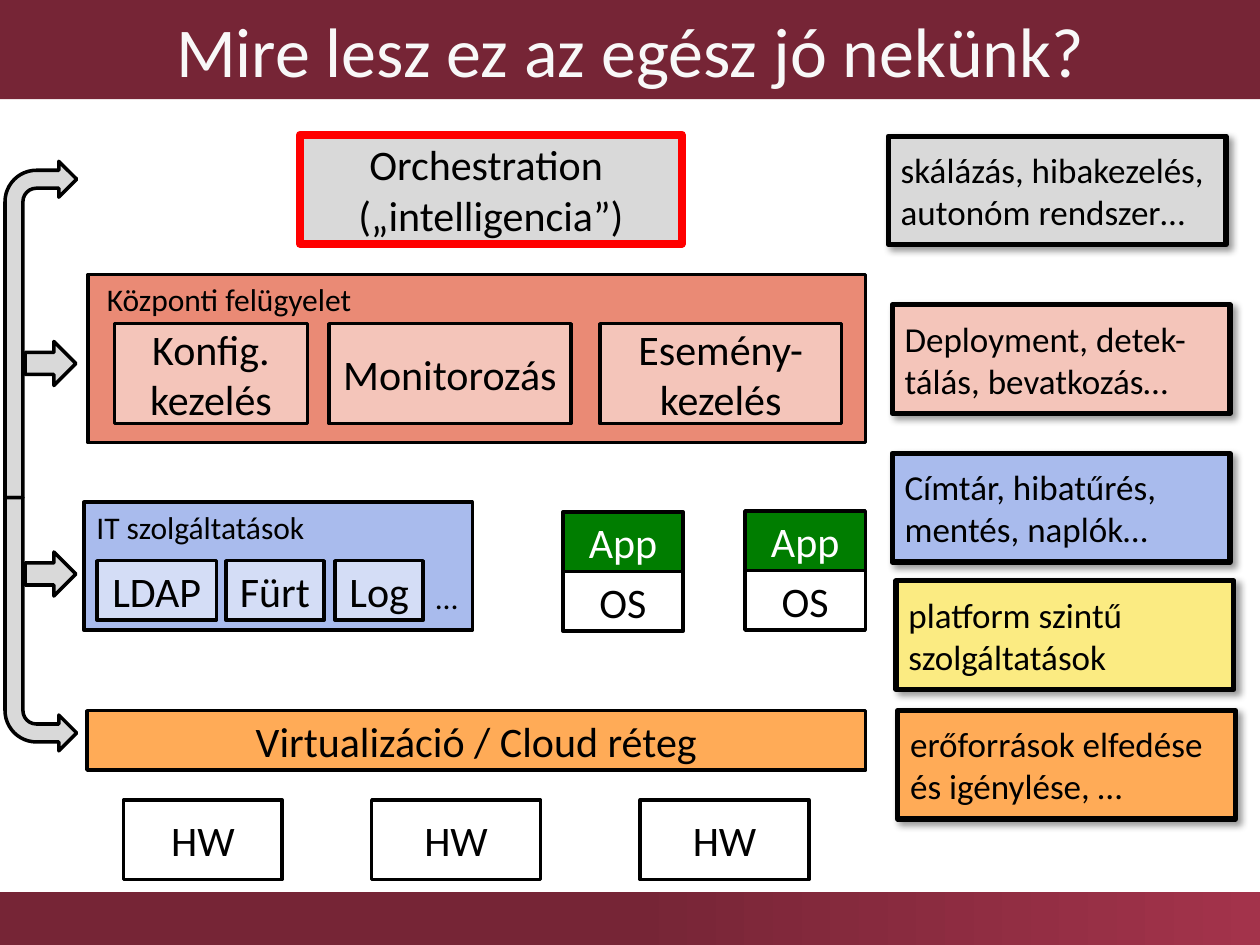
import pptx
import pptx.util
import pptx.dml.color
import pptx.enum.shapes
import pptx.enum.text
import pptx.oxml
import pptx.oxml.ns
from dataclasses import dataclass
from typing import Optional

Pt = pptx.util.Pt
Kind = pptx.enum.shapes.MSO_SHAPE
Align = pptx.enum.text.PP_ALIGN
Anchor = pptx.enum.text.MSO_ANCHOR

BLACK, WHITE, GREY = "000000", "FFFFFF", "D9D9D9"
WINE, ROSE = "762536", "A3334B"
CORAL, PINK = "EA8A75", "F4C5BA"
BLUE, PALE = "A9BBED", "D4DDF6"
ORANGE, YELLOW, GREEN, RED = "FFAB57", "FBEB82", "007D00", "FF0000"

SHADOW = (
    f'<a:effectLst {pptx.oxml.ns.nsdecls("a")}>'
    '<a:outerShdw blurRad="50800" dist="38100" dir="2700000" algn="tl" rotWithShape="0">'
    '<a:srgbClr val="000000"><a:alpha val="40000"/></a:srgbClr>'
    '</a:outerShdw></a:effectLst>'
)


@dataclass
class Box:
    x: float
    y: float
    w: float
    h: float
    fill: Optional[str] = WHITE
    text: str = ""
    ink: str = BLACK
    edge: str = BLACK
    line: float = 2


@dataclass
class Note:
    x: float
    y: float
    fill: str
    text: str


@dataclass
class Label:
    x: float
    y: float
    w: float
    text: str


@dataclass
class Arrow:
    kind: Kind
    x: float
    y: float
    w: float
    h: float
    flip: bool = False


def rgb(code: str) -> pptx.dml.color.RGBColor:
    return pptx.dml.color.RGBColor.from_string(code)


def write(shape, text: str, size: float, ink: str, align=Align.CENTER,
          anchor=Anchor.MIDDLE, side: float = 7.2) -> None:
    frame = shape.text_frame
    frame.auto_size = pptx.enum.text.MSO_AUTO_SIZE.NONE
    frame.word_wrap = True
    frame.vertical_anchor = anchor
    frame.margin_left = frame.margin_right = Pt(side)
    para = frame.paragraphs[0]
    para.alignment = align
    for i, part in enumerate(text.split("\n")):
        if i:
            para.add_line_break()
        run = para.add_run()
        run.text = part
        run.font.name = "Calibri"
        run.font.size = Pt(size)
        run.font.color.rgb = rgb(ink)


def add_form(slide, kind: Kind, x: float, y: float, w: float, h: float,
             fill: Optional[str], edge: str, line: float):
    form = slide.shapes.add_shape(kind, Pt(x), Pt(y), Pt(w), Pt(h))
    form.shadow.inherit = False
    if fill:
        form.fill.solid()
        form.fill.fore_color.rgb = rgb(fill)
    else:
        form.fill.background()
    form.line.color.rgb = rgb(edge)
    form.line.width = Pt(line)
    return form


def add_box(slide, box: Box) -> None:
    form = add_form(slide, Kind.RECTANGLE, box.x, box.y, box.w, box.h,
                    box.fill, box.edge, box.line)
    if box.text:
        write(form, box.text, 24, box.ink, side=5)


def add_note(slide, note: Note) -> None:
    form = add_form(slide, Kind.RECTANGLE, note.x, note.y, 193, 62,
                    note.fill, BLACK, 3)
    props = form._element.spPr
    props.remove(props.find(pptx.oxml.ns.qn("a:effectLst")))
    props.append(pptx.oxml.parse_xml(SHADOW))
    write(form, note.text, 20, BLACK, Align.LEFT)


def add_label(slide, label: Label) -> None:
    area = slide.shapes.add_textbox(Pt(label.x), Pt(label.y), Pt(label.w), Pt(29))
    write(area, label.text, 18, BLACK, Align.LEFT, Anchor.TOP)


def add_arrow(slide, arrow: Arrow) -> None:
    form = add_form(slide, arrow.kind, arrow.x, arrow.y, arrow.w, arrow.h,
                    GREY, BLACK, 2)
    if arrow.flip:
        form._element.spPr.xfrm.set("flipV", "1")


def add_band(slide) -> None:
    band = slide.shapes.add_shape(Kind.RECTANGLE, 0, Pt(509.8), Pt(720), Pt(30.2))
    band.shadow.inherit = False
    band.line.fill.background()
    band.fill.gradient()
    band.fill.gradient_angle = 0
    for stop, place, code in zip(band.fill.gradient_stops, (0.5, 1), (WINE, ROSE)):
        stop.position = place
        stop.color.rgb = rgb(code)


def add_title(slide, text: str) -> None:
    title = slide.shapes.title
    title.left, title.top, title.width, title.height = 0, 0, Pt(720), Pt(56.7)
    title.fill.solid()
    title.fill.fore_color.rgb = rgb(WINE)
    write(title, text, 40, "F8F8F8")


HOSTS = [Box(x, 457.2, w, 45.4, text="HW")
         for x, w in ((70.6, 90.7), (212.4, 96.5), (365.8, 96.5))]
STACKS = [box for x, y in ((321.6, 292.6), (425.7, 292))
          for box in (Box(x, y + 34, 68.8, 34, None, "OS"),
                      Box(x, y, 68.8, 34, GREEN, "App", WHITE))]
TOOLS = [Box(x, 185, w, 57, PINK, text) for x, w, text in (
    (65.5, 110.2, "Konfig. kezelés"),
    (188, 138.2, "Monitorozás"),
    (342.7, 138.2, "Esemény-kezelés"))]
PARTS = [Box(x, 320.4, w, 34, PALE, text) for x, w, text in (
    (55.4, 68.4, "LDAP"), (129, 56.2, "Fürt"), (191.5, 50.4, "Log"))]
BOXES = [
    Box(50.4, 156.8, 444.2, 96.2, CORAL),
    *HOSTS,
    *STACKS,
    Box(48, 287, 222, 73.2, BLUE),
    *PARTS,
    Box(49.7, 406.1, 445, 34, ORANGE, "Virtualizáció / Cloud réteg"),
    *TOOLS,
    Box(171.4, 77, 218.2, 62.4, GREY, "Orchestration \n(„intelligencia”)",
        edge=RED, line=4.5),
]
LABELS = [
    Label(48, 287, 148, "IT szolgáltatások"),
    Label(242, 327, 28, "…"),
    Label(54, 156.2, 187, "Központi felügyelet"),
]
ARROWS = [
    Arrow(Kind.BENT_ARROW, 2.9, 92.2, 41, 192.2),
    Arrow(Kind.BENT_ARROW, 2.9, 284.4, 41, 144.7, True),
    Arrow(Kind.RIGHT_ARROW, 14.4, 315.4, 29, 25.2),
    Arrow(Kind.RIGHT_ARROW, 14.4, 195.1, 29, 25.2),
]
NOTES = [
    Note(513, 406.1, ORANGE, "erőforrások elfedése és igénylése, …"),
    Note(512, 331.9, YELLOW, "platform szintű\nszolgáltatások"),
    Note(509.8, 259.2, BLUE, "Címtár, hibatűrés, mentés, naplók…"),
    Note(509.8, 174.2, PINK, "Deployment, detek-tálás, bevatkozás…"),
    Note(507.6, 77.8, GREY, "skálázás, hibakezelés, \nautonóm rendszer…"),
]


def main() -> None:
    deck = pptx.Presentation()
    deck.slide_width, deck.slide_height = Pt(720), Pt(540)
    slide = deck.slides.add_slide(deck.slide_layouts[5])
    add_band(slide)
    add_title(slide, "Mire lesz ez az egész jó nekünk?")
    for draw, items in ((add_box, BOXES), (add_label, LABELS),
                        (add_arrow, ARROWS), (add_note, NOTES)):
        for item in items:
            draw(slide, item)
    deck.save("out.pptx")


if __name__ == "__main__":
    main()
